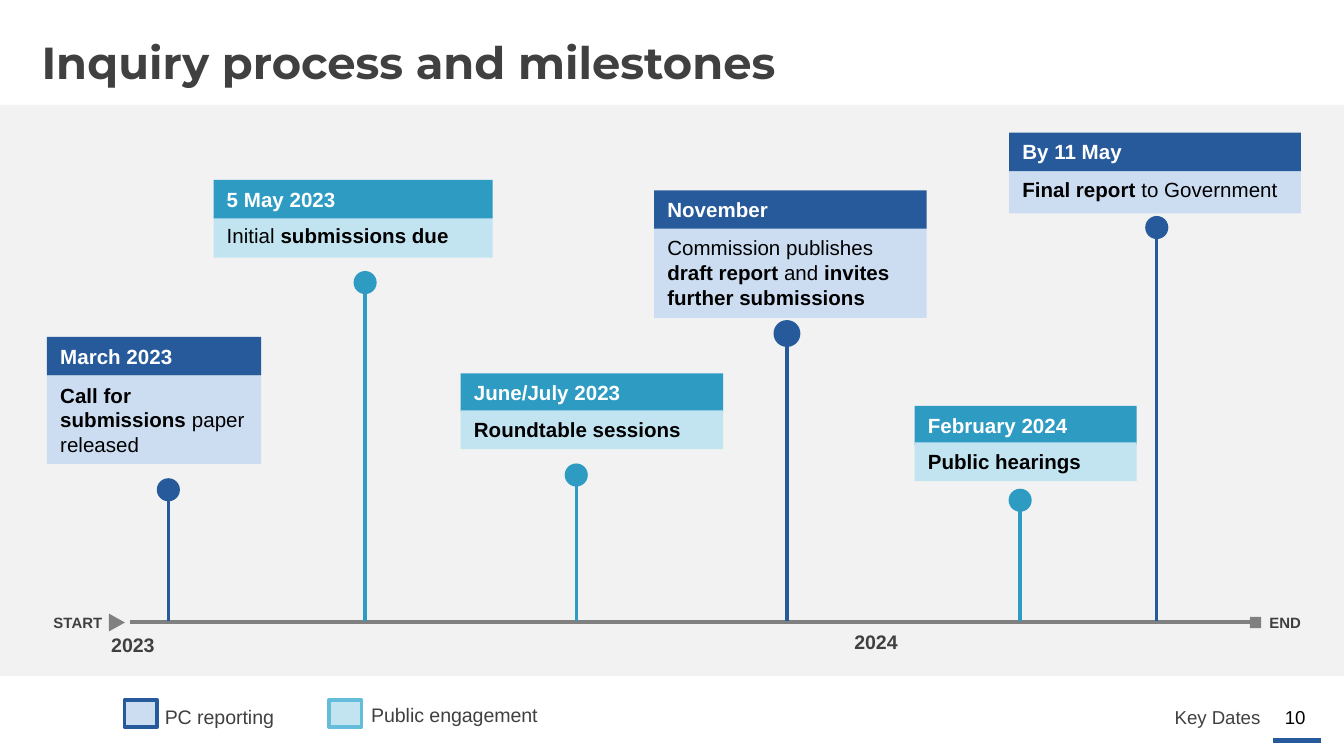
from dataclasses import dataclass

from lxml.etree import SubElement
from pptx import Presentation
from pptx.dml.color import RGBColor
from pptx.enum.shapes import MSO_CONNECTOR, MSO_SHAPE
from pptx.enum.text import MSO_ANCHOR, PP_ALIGN
from pptx.oxml.ns import qn
from pptx.util import Pt


@dataclass(frozen=True)
class Theme:
    """Colours, fonts and type sizes of the slide."""
    blue: str = "265A9A"
    pale_blue: str = "CCDDF2"
    teal: str = "2E9BC3"
    pale_teal: str = "C2E4F1"
    light_teal: str = "66BCDB"
    band: str = "F2F2F2"
    axis: str = "808080"
    dark: str = "404040"
    black: str = "000000"
    white: str = "FFFFFF"
    title_font: str = "Montserrat"
    font: str = "Arial"
    title_size: float = 24
    card_size: float = 11
    label_size: float = 10.5
    footer_size: float = 10
    end_size: float = 8


THEME = Theme()
REPORTING = (THEME.blue, THEME.pale_blue)
ENGAGEMENT = (THEME.teal, THEME.pale_teal)
AXIS_Y = 333.3
MARKER_SIZE = 12.4
HEADER_HEIGHT = 20.7


@dataclass(frozen=True)
class Milestone:
    """A dated card and the marker that ties it to the axis; bold runs are flagged."""
    date: str
    runs: tuple
    colors: tuple
    left: float
    top: float
    width: float
    body_offset: float
    body_height: float
    marker_x: float
    marker_y: float
    header_in_front: bool = False
    marker_outline: float = 0


MILESTONES = (
    Milestone("5 May 2023", (("Initial ", False), ("submissions due", True)), ENGAGEMENT,
              114.4, 96.4, 149.6, 19.4, 22.3, 195.6, 151.4, header_in_front=True),
    Milestone("November", (("Commission publishes ", False), ("draft report ", True),
                           ("and ", False), ("invites further submissions", True)), REPORTING,
              350.4, 102, 146, 20.5, 47.8, 421.6, 178.7, marker_outline=2),
    Milestone("June/July 2023", (("Roundtable sessions", True),), ENGAGEMENT,
              246.8, 200.1, 140.6, 19.8, 20.7, 308.7, 254.5),
    Milestone("By 11 May", (("Final report ", True), ("to Government", False)), REPORTING,
              540.6, 71.1, 156.3, 20.2, 23.1, 619.7, 121.9, header_in_front=True),
    Milestone("March 2023", (("Call for submissions ", True), ("paper released", False)),
              REPORTING, 25.2, 180.5, 114.7, 20.9, 47.2, 90.2, 262.4),
    Milestone("February 2024", (("Public hearings", True),), ENGAGEMENT,
              490, 217.5, 119, 19.6, 20.7, 546.5, 268),
)


def color(value):
    """Turn a hex string into a colour."""
    return RGBColor.from_string(value)


def add_block(slide, kind, left, top, width, height, fill, outline=None, weight=0):
    """Add a filled preset shape, outlined only when asked."""
    shape = slide.shapes.add_shape(kind, Pt(left), Pt(top), Pt(width), Pt(height))
    shape.shadow.inherit = False
    shape.fill.solid()
    shape.fill.fore_color.rgb = color(fill)
    if outline:
        shape.line.color.rgb = color(outline)
        shape.line.width = Pt(weight)
    else:
        shape.line.fill.background()
    return shape


def add_line(slide, start, end, line_color, weight):
    """Add a straight line between two points."""
    line = slide.shapes.add_connector(MSO_CONNECTOR.STRAIGHT, *map(Pt, start + end))
    line.line.color.rgb = color(line_color)
    line.line.width = Pt(weight)
    SubElement(line._element.spPr, qn("a:effectLst"))


def write(shape, runs, size, text_color, bold=False, font=THEME.font,
          align=PP_ALIGN.LEFT, anchor=MSO_ANCHOR.TOP, wrap=True):
    """Write one paragraph, given as plain text or as (text, bold) runs."""
    frame = shape.text_frame
    frame.word_wrap = wrap
    frame.vertical_anchor = anchor
    paragraph = frame.paragraphs[0]
    paragraph.alignment = align
    paragraph.font.name = font
    paragraph.font.size = Pt(size)
    paragraph.font.color.rgb = color(text_color)
    if isinstance(runs, str):
        paragraph.font.bold = bold
        paragraph.add_run().text = runs
        return
    for text, run_bold in runs:
        run = paragraph.add_run()
        run.text = text
        run.font.bold = run_bold


def add_label(slide, text, left, top, width, height, size, text_color=THEME.dark, **style):
    """Add a text box holding one paragraph."""
    box = slide.shapes.add_textbox(Pt(left), Pt(top), Pt(width), Pt(height))
    write(box, text, size, text_color, **style)
    return box


def add_card(slide, milestone):
    """Add the date header and the description below it."""
    strong, pale = milestone.colors

    def add_header():
        header = add_block(slide, MSO_SHAPE.RECTANGLE, milestone.left, milestone.top,
                           milestone.width, HEADER_HEIGHT, strong)
        write(header, milestone.date, THEME.card_size, THEME.white, bold=True)

    def add_body():
        body = add_block(slide, MSO_SHAPE.RECTANGLE, milestone.left,
                         milestone.top + milestone.body_offset,
                         milestone.width, milestone.body_height, pale)
        write(body, milestone.runs, THEME.card_size, THEME.black)

    layers = (add_body, add_header) if milestone.header_in_front else (add_header, add_body)
    for add_layer in layers:
        add_layer()


def add_marker(slide, milestone):
    """Add the stem rising from the axis and the dot on top of it."""
    strong = milestone.colors[0]
    x, y = milestone.marker_x, milestone.marker_y
    add_line(slide, (x, AXIS_Y - 0.7), (x, y), strong, 1.75)
    add_block(slide, MSO_SHAPE.OVAL, x - MARKER_SIZE / 2, y - MARKER_SIZE / 2,
              MARKER_SIZE, MARKER_SIZE, strong,
              strong if milestone.marker_outline else None, milestone.marker_outline)


def add_axis(slide):
    """Add the time axis with its end marks and labels."""
    add_line(slide, (69.8, AXIS_Y), (671, AXIS_Y), THEME.axis, 2)
    start = add_block(slide, MSO_SHAPE.ISOSCELES_TRIANGLE, 57.8, 329.2, 9.6, 8.6, THEME.axis)
    start.rotation = 90
    add_block(slide, MSO_SHAPE.RECTANGLE, 669.6, 330.5, 6, 6, THEME.axis)
    for text, left in (("START", 21.6), ("END", 673)):
        add_label(slide, text, left, 325.2, 45.4, 20.9, THEME.end_size, bold=True)
    for text, left, top in (("2023", 52.5, 335.7), ("2024", 450.6, 334.2)):
        add_label(slide, text, left, top, 78.5, 8, THEME.label_size, bold=True)


def add_legend(slide):
    """Add the colour key below the timeline."""
    for text, fill, outline, left, text_left, text_top, width in (
            ("PC reporting", THEME.pale_blue, THEME.blue, 66.7, 81.2, 374, 100),
            ("Public engagement", THEME.pale_teal, THEME.light_teal, 176.2, 191.7, 373, 123)):
        add_block(slide, MSO_SHAPE.RECTANGLE, left, 375.1, 17.5, 14.4, fill, outline, 2)
        add_label(slide, text, text_left, text_top, width, 18, THEME.label_size)


def add_footer(slide):
    """Add the section name, the page number and its underline."""
    section = add_label(slide, "Key Dates", 589, 371, 92, 26.6, THEME.footer_size,
                        align=PP_ALIGN.RIGHT, anchor=MSO_ANCHOR.MIDDLE)
    section.text_frame.margin_right = Pt(5.8)
    add_label(slide, "10", 680.6, 371, 26.6, 26.6, THEME.footer_size, THEME.black,
              align=PP_ALIGN.CENTER, anchor=MSO_ANCHOR.MIDDLE, wrap=False)
    add_line(slide, (682, 396.8), (707.8, 396.8), THEME.blue, 2.75)


def main():
    """Build the slide and save it."""
    presentation = Presentation()
    presentation.slide_width, presentation.slide_height = Pt(720), Pt(405)
    slide = presentation.slides.add_slide(presentation.slide_layouts[6])
    add_block(slide, MSO_SHAPE.RECTANGLE, 0, 56.2, 720, 306, THEME.band)
    add_label(slide, "Inquiry process and milestones", 15.2, 15.2, 430.6, 36,
              THEME.title_size, bold=True, font=THEME.title_font, wrap=False)
    add_axis(slide)
    for milestone in MILESTONES:
        add_card(slide, milestone)
        add_marker(slide, milestone)
    add_legend(slide)
    add_footer(slide)
    presentation.save("out.pptx")


main()
